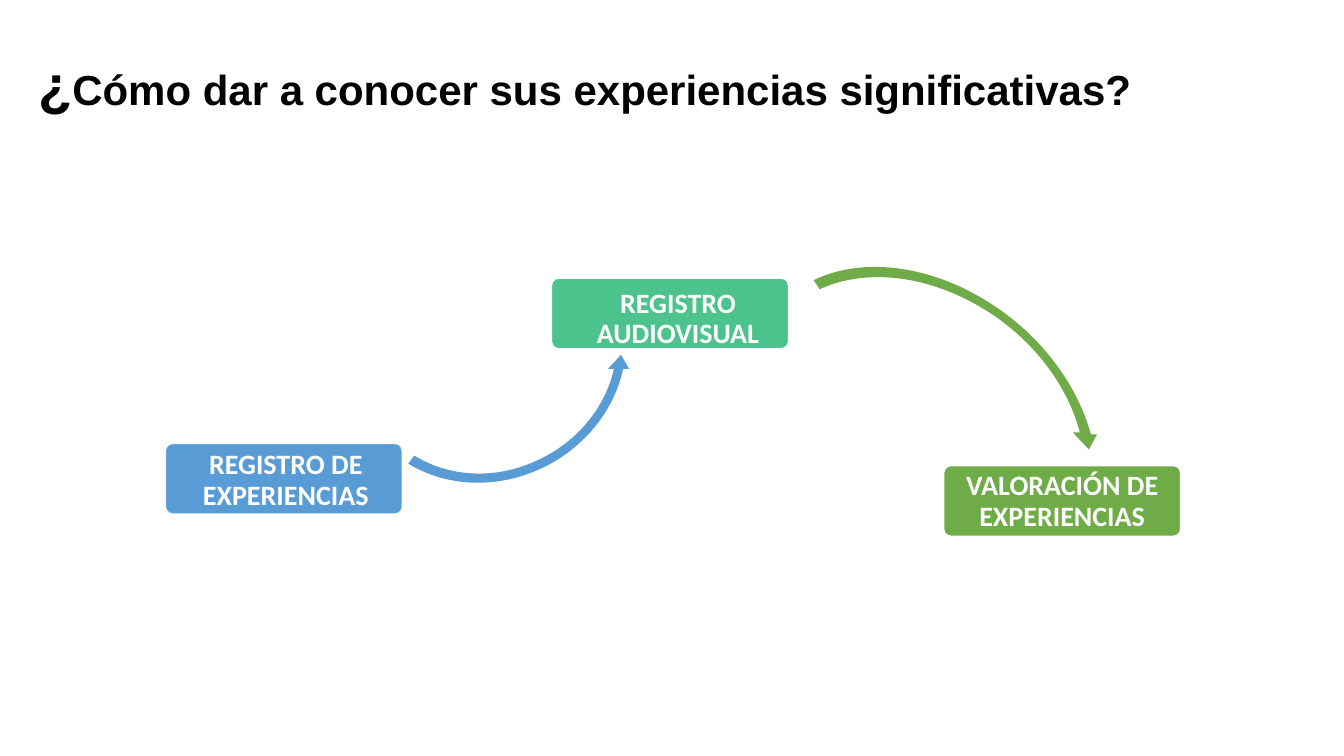
import math
from lxml import etree
from pptx import Presentation
from pptx import util as u
from pptx.dml.color import RGBColor
from pptx.enum import shapes, text
from pptx.oxml import ns

COLORS = {"blue": "599BD5", "teal": "4CC38C", "green": "6FAB46",
          "white": "FFFFFF", "black": "000000"}

deck = Presentation()
deck.slide_width, deck.slide_height = u.Inches(13.33), u.Inches(7.5)
page = deck.slides.add_slide(deck.slide_layouts[6])

# Grid of 13.33 columns by 7.5 rows
COL, ROW = deck.slide_width / 13.33, deck.slide_height / 7.5


def write_text(spans, left, top, width, height, font, color, align,
               spacing=1.0, inset_x=0.1, inset_y=0.05):
    """Add a bold, vertically centred paragraph made of (words, size) spans."""
    box = page.shapes.add_textbox(int(left * COL), int(top * ROW),
                                  int(width * COL), int(height * ROW))
    frame = box.text_frame
    frame.word_wrap = True
    frame.vertical_anchor = text.MSO_ANCHOR.MIDDLE
    frame.margin_left = frame.margin_right = int(inset_x * COL)
    frame.margin_top = frame.margin_bottom = int(inset_y * ROW)
    para = frame.paragraphs[0]
    para.alignment = align
    para.line_spacing = spacing
    for words, size in spans:
        span = para.add_run()
        span.text = words
        span.font.name, span.font.size, span.font.bold = font, u.Pt(size), True
        span.font.color.rgb = RGBColor.from_string(COLORS[color])


def draw_arrow(color, left, top, width, height, turn, outline):
    """Draw an outline, given as placed on the slide, in a turned frame."""
    right, bottom = left + width, top + height
    builder = page.shapes.build_freeform(int(left * COL), int(top * ROW))
    builder.add_line_segments([(int(x * COL), int(y * ROW)) for x, y in
                               ((right, top), (right, bottom), (left, bottom))])
    arrow = builder.convert_to_shape()
    arrow.rotation = turn
    arrow.shadow.inherit = False
    arrow.fill.solid()
    arrow.fill.fore_color.rgb = RGBColor.from_string(COLORS[color])
    arrow.line.fill.background()

    # Replace the frame's edges by the curves, turned back into the frame
    curve = next(arrow._element.iter(ns.qn("a:path")))
    for edge in list(curve):
        curve.remove(edge)
    cos, sin = math.cos(math.radians(turn)), math.sin(math.radians(turn))
    for command, *points in outline:
        edge = etree.SubElement(curve, ns.qn("a:" + command))
        for x, y in points:
            dx, dy = x - left - width / 2, y - top - height / 2
            etree.SubElement(edge, ns.qn("a:pt"),
                             x=str(int((width / 2 + dx * cos + dy * sin) * COL)),
                             y=str(int((height / 2 - dx * sin + dy * cos) * ROW)))
    etree.SubElement(curve, ns.qn("a:close"))


# Title
write_text([("¿", 40), ("Cómo dar a conocer sus experiencias significativas?", 30)],
           0.28, 0.7, 12.06, 0.25, "Arial", "black", text.PP_ALIGN.LEFT)

# Curved arrows: tail, outer edge, head, inner edge
MOVE, LINE, CURVE = "moveTo", "lnTo", "cubicBezTo"
draw_arrow("blue", 3.4, 2.19, 2.9, 2.63, 333.3, [
    (MOVE, (4.05, 4.6)), (LINE, (4.11, 4.52)),
    (CURVE, (4.45, 4.73), (4.9, 4.76), (5.3, 4.58)),
    (CURVE, (5.7, 4.41), (6, 4.06), (6.09, 3.66)),
    (LINE, (6.03, 3.66)), (LINE, (6.16, 3.52)),
    (LINE, (6.24, 3.66)), (LINE, (6.18, 3.66)),
    (CURVE, (6.09, 4.09), (5.77, 4.47), (5.34, 4.66)),
    (CURVE, (4.91, 4.85), (4.43, 4.83), (4.05, 4.6))])
draw_arrow("green", 7.19, 2.79, 3.91, 2.95, 38.4, [
    (MOVE, (8.07, 2.78)),
    (CURVE, (8.52, 2.56), (9.14, 2.62), (9.69, 2.93)),
    (CURVE, (10.25, 3.24), (10.67, 3.76), (10.82, 4.31)),
    (LINE, (10.88, 4.31)), (LINE, (10.8, 4.46)),
    (LINE, (10.64, 4.29)), (LINE, (10.71, 4.29)),
    (CURVE, (10.58, 3.78), (10.18, 3.29), (9.66, 3.01)),
    (CURVE, (9.13, 2.72), (8.56, 2.67), (8.13, 2.87))])

# Steps: words, colour, card corner, label corner, label side inset
steps = [
    ("REGISTRO DE EXPERIENCIAS", "blue", (1.64, 4.4), (1.69, 4.44), 0.04),
    ("REGISTRO AUDIOVISUAL", "teal", (5.47, 2.76), (5.58, 2.84), 0.04),
    ("VALORACIÓN DE EXPERIENCIAS", "green", (9.36, 4.62), (9.39, 4.65), 0.05),
]
for words, color, (left, top), label_corner, inset in steps:
    card = page.shapes.add_shape(shapes.MSO_SHAPE.ROUNDED_RECTANGLE,
                                 int(left * COL), int(top * ROW),
                                 int(2.35 * COL), int(0.7 * ROW))
    card.adjustments[0] = 0.1
    card.shadow.inherit = False
    card.fill.solid()
    card.fill.fore_color.rgb = RGBColor.from_string(COLORS[color])
    card.line.color.rgb = RGBColor.from_string(COLORS["white"])
    card.line.width = u.Pt(1)
    write_text([(words, 20)], *label_corner, 2.29, 0.66, "Calibri", "white",
               text.PP_ALIGN.CENTER, spacing=0.9, inset_x=inset, inset_y=0.03)

deck.save("out.pptx")
